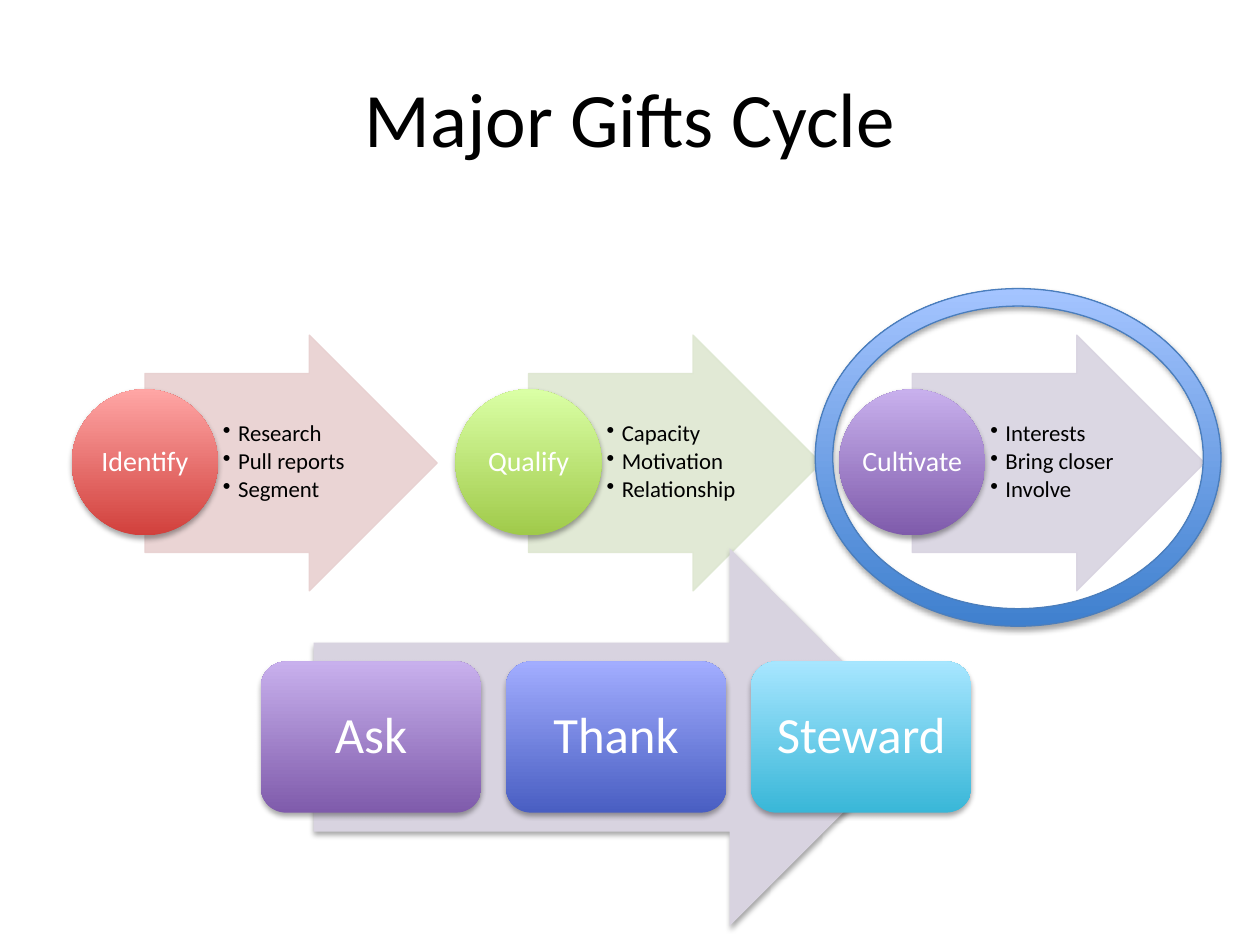
from lxml import etree
from pptx import Presentation
from pptx.dml.color import RGBColor
from pptx.enum.shapes import MSO_SHAPE
from pptx.enum.text import MSO_ANCHOR, PP_ALIGN
from pptx.oxml.ns import qn
from pptx.util import Inches, Pt

ARROW, OVAL = MSO_SHAPE.RIGHT_ARROW, MSO_SHAPE.OVAL
CARD, RING = MSO_SHAPE.ROUNDED_RECTANGLE, MSO_SHAPE.DONUT
LEFT, CENTER, MIDDLE = PP_ALIGN.LEFT, PP_ALIGN.CENTER, MSO_ANCHOR.MIDDLE

BLACK, WHITE = RGBColor(0, 0, 0), RGBColor(255, 255, 255)
ROSE = RGBColor(0xE8, 0xD0, 0xD0)
SAGE = RGBColor(0xDE, 0xE7, 0xD1)
LILAC = RGBColor(0xD8, 0xD3, 0xE0)
EDGE = RGBColor(0x4B, 0x7E, 0xBC)
# Gradients run from the bottom colour to the top colour
RED = RGBColor(0xD1, 0x40, 0x3C), RGBColor(0xFF, 0xA6, 0xA5)
GREEN = RGBColor(0xA0, 0xCA, 0x4A), RGBColor(0xDA, 0xFF, 0xA5)
PURPLE = RGBColor(0x7F, 0x5B, 0xAB), RGBColor(0xC8, 0xB0, 0xED)
INDIGO = RGBColor(0x49, 0x5E, 0xC2), RGBColor(0xA2, 0xAD, 0xFF)
AQUA = RGBColor(0x39, 0xB7, 0xD8), RGBColor(0xA7, 0xE6, 0xFF)
BLUE = RGBColor(0x3F, 0x80, 0xCE), RGBColor(0xA4, 0xC4, 0xFF)

COLS, ROWS = 100, 75


def assign(obj, vals):
    for name, val in vals.items():
        setattr(obj, name, val)


def child(node, tag, **attrs):
    return etree.SubElement(node, qn(tag), attrs)


class Deck:
    font = "Calibri"

    def __init__(self):
        self.prs = Presentation()
        assign(self.prs, {"slide_width": Inches(10), "slide_height": Inches(7.5)})
        self.slide = self.prs.slides.add_slide(self.prs.slide_layouts[6])

    def place(self, x, y, w, h):
        """Turn grid columns and rows into lengths."""
        dx, dy = self.prs.slide_width / COLS, self.prs.slide_height / ROWS
        return [round(n) for n in (x * dx, y * dy, w * dx, h * dy)]

    def shape(self, kind, at, fill, line=None, alpha=None, adj=None, shade=True):
        shp = self.slide.shapes.add_shape(kind, *self.place(*at))
        shp.shadow.inherit = False
        if adj:
            for i, val in enumerate(adj):
                shp.adjustments[i] = val
        if isinstance(fill, tuple) and not isinstance(fill, RGBColor):
            shp.fill.gradient()
            shp.fill.gradient_angle = 90
            for stop, color in zip(shp.fill.gradient_stops, fill):
                stop.color.rgb = color
        else:
            shp.fill.solid()
            shp.fill.fore_color.rgb = fill
        if line is None:
            shp.line.fill.background()
        else:
            shp.line.color.rgb = line
            shp.line.width = Pt(0.75)
        props = shp._element.spPr
        if alpha:
            for color in props.iter(qn("a:srgbClr")):
                child(color, "a:alpha", val=str(alpha * 1000))
        if shade:
            cast = child(props.find(qn("a:effectLst")), "a:outerShdw", blurRad="40000",
                         dist="23000", dir="5400000", rotWithShape="0")
            child(child(cast, "a:srgbClr", val="000000"), "a:alpha", val="35000")
        return shp

    def label(self, shp, lines, size, color=WHITE, align=CENTER, pad=(0.01,) * 4,
              wrap=False, bullet=False, para=None):
        frame = shp.text_frame
        sides = ("margin_left", "margin_top", "margin_right", "margin_bottom")
        assign(frame, {"word_wrap": wrap, "vertical_anchor": MIDDLE})
        assign(frame, dict(zip(sides, map(Inches, pad))))
        for i, line in enumerate(lines):
            par = frame.add_paragraph() if i else frame.paragraphs[0]
            assign(par, {"alignment": align, **(para or {})})
            if bullet:
                props = par._p.get_or_add_pPr()
                props.set("marL", str(Inches(0.12)))
                props.set("indent", str(-Inches(0.12)))
                child(props, "a:buChar", char="•")
            run = par.add_run()
            run.text = line
            assign(run.font, {"name": self.font, "size": Pt(size)})
            run.font.color.rgb = color

    def text(self, at, lines, size, **style):
        box = self.slide.shapes.add_textbox(*self.place(*at))
        self.label(box, lines, size, BLACK, wrap=True, **style)

    def stage(self, x, name, points, tint, ball):
        """An arrow with bullets and a round label at its tail."""
        self.shape(ARROW, (x + 5.8, 26.6, 23.2, 20.3), tint, line=tint, alpha=90,
                   adj=(0.7, 0.5), shade=False)
        self.text((x + 11.6, 29.6, 11.3, 14.2), points, 13, align=LEFT, bullet=True,
                  pad=(0.04, 0.01, 0.02, 0.01),
                  para={"level": 1, "line_spacing": 0.9, "space_after": Pt(2)})
        disc = self.shape(OVAL, (x, 30.9, 11.6, 11.6), ball)
        self.label(disc, [name], 16, para={"line_spacing": 0.9})

    def card(self, x, name, fill):
        box = self.shape(CARD, (x, 52.5, 17.5, 12), fill)
        self.label(box, [name], 29, para={"line_spacing": 0.9})


def main():
    deck = Deck()

    # Title
    deck.text((5, 3, 90, 12.5), ["Major Gifts Cycle"], 44, pad=(0.1, 0.05, 0.1, 0.05))

    # First three stages
    stages = [
        ("Identify", ["Research", "Pull reports", "Segment"], ROSE, RED),
        ("Qualify", ["Capacity", "Motivation", "Relationship"], SAGE, GREEN),
        ("Cultivate", ["Interests", "Bring closer", "Involve"], LILAC, PURPLE),
    ]
    for i, stage in enumerate(stages):
        deck.stage(5.7 + 30.45 * i, *stage)

    # Last three stages on one wide arrow
    deck.shape(ARROW, (24.9, 43.5, 48, 30), LILAC)
    cards = [("Ask", PURPLE), ("Thank", INDIGO), ("Steward", AQUA)]
    for i, card in enumerate(cards):
        deck.card(20.7 + 19.45 * i, *card)

    # Ring around the current stage
    deck.shape(RING, (64.7, 22.9, 32.2, 26.8), BLUE, line=EDGE, adj=(0.052,))

    deck.prs.save("out.pptx")


if __name__ == "__main__":
    main()
